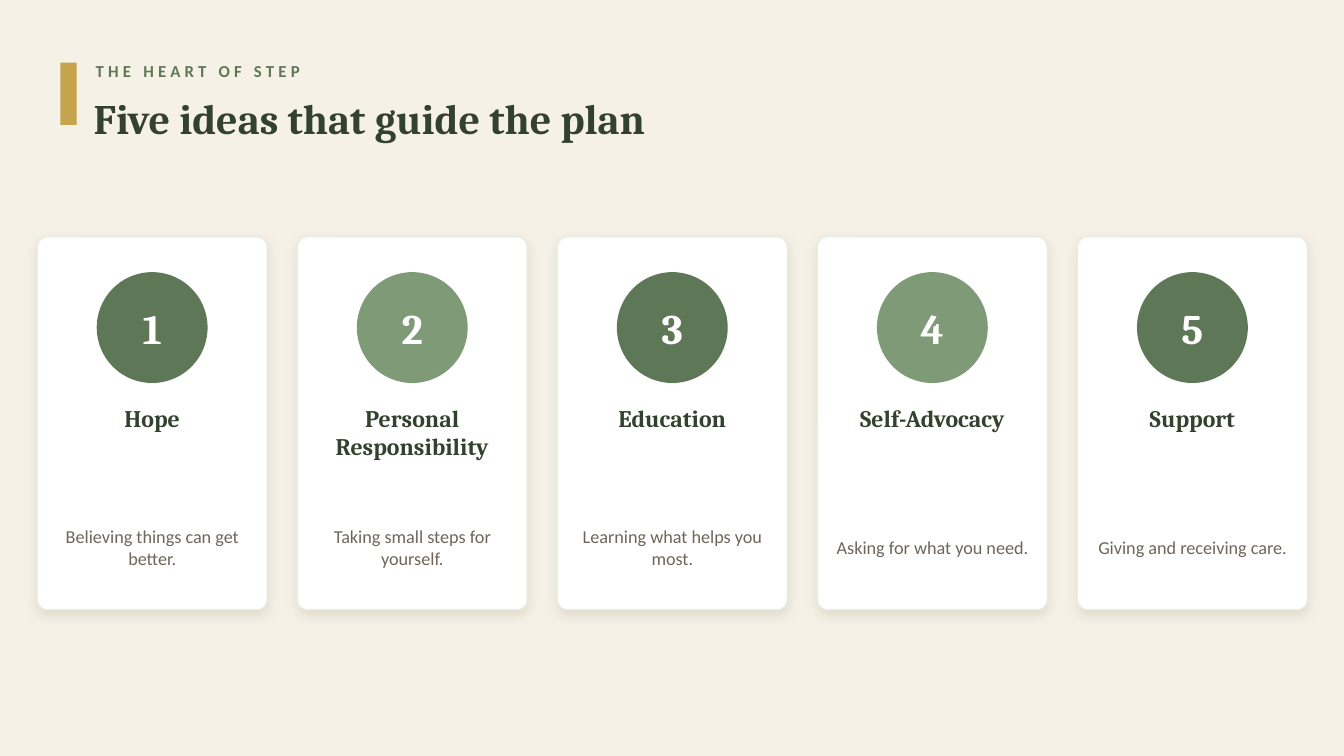
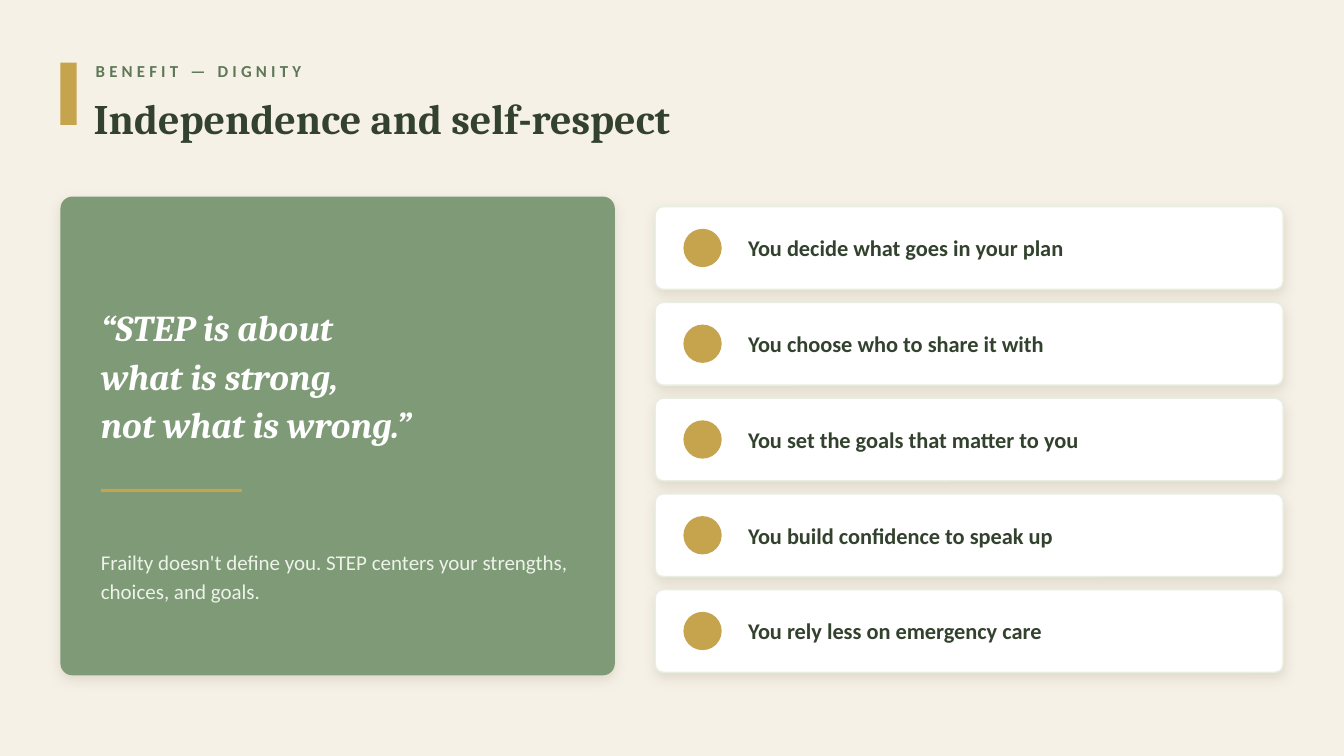
from lxml import etree
from pptx import Presentation
from pptx.dml.color import RGBColor
from pptx.enum import shapes, text
from pptx.oxml import ns
from pptx.util import Pt

CREAM = RGBColor(0xF6, 0xF1, 0xE7)
GOLD = RGBColor(0xC6, 0xA4, 0x4E)
MOSS = RGBColor(0x5E, 0x78, 0x57)
SAGE = RGBColor(0x7E, 0x9A, 0x77)
FOREST = RGBColor(0x33, 0x42, 0x2E)
TAUPE = RGBColor(0x6E, 0x66, 0x5A)
MIST = RGBColor(0xED, 0xF3, 0xE8)
EDGE = RGBColor(0xE8, 0xEE, 0xE2)
SHADE = RGBColor(0xB9, 0xB0, 0x9B)
WHITE = RGBColor(0xFF, 0xFF, 0xFF)

RECT = shapes.MSO_SHAPE.RECTANGLE
ROUNDED = shapes.MSO_SHAPE.ROUNDED_RECTANGLE
OVAL = shapes.MSO_SHAPE.OVAL
TOP = text.MSO_ANCHOR.TOP
MIDDLE = text.MSO_ANCHOR.MIDDLE
LEFT = text.PP_ALIGN.LEFT
CENTER = text.PP_ALIGN.CENTER

SERIF = {"name": "Cambria", "bold": True}
SANS = {"name": "Calibri"}
KICKER = {**SANS, "size": Pt(12), "bold": True, "rgb": MOSS}
TITLE = {**SERIF, "size": Pt(30), "rgb": FOREST}
NUMBER = {**SERIF, "size": Pt(30), "rgb": WHITE}
IDEA = {**SERIF, "size": Pt(17), "rgb": FOREST}
DETAIL = {**SANS, "size": Pt(13), "rgb": TAUPE}
QUOTE = {**SERIF, "size": Pt(26), "italic": True, "rgb": WHITE}
REMARK = {**SANS, "size": Pt(15), "rgb": MIST}
POINT = {**SANS, "size": Pt(16), "bold": True, "rgb": FOREST}

IDEAS = [
    (["Hope"], "Believing things can get better."),
    (["Personal", "Responsibility"], "Taking small steps for yourself."),
    (["Education"], "Learning what helps you most."),
    (["Self-Advocacy"], "Asking for what you need."),
    (["Support"], "Giving and receiving care."),
]
POINTS = [
    "You decide what goes in your plan",
    "You choose who to share it with",
    "You set the goals that matter to you",
    "You build confidence to speak up",
    "You rely less on emergency care",
]


def write(shape, lines, style, align=LEFT, anchor=MIDDLE, spacing=None,
          left=0, right=0, tracking=None):
    frame = shape.text_frame
    settings = {
        "word_wrap": True, "auto_size": text.MSO_AUTO_SIZE.NONE,
        "vertical_anchor": anchor, "margin_left": Pt(left),
        "margin_right": Pt(right), "margin_top": 0, "margin_bottom": 0,
    }
    for name, value in settings.items():
        setattr(frame, name, value)
    for index, line in enumerate(lines):
        para = frame.add_paragraph() if index else frame.paragraphs[0]
        para.alignment = align
        para.line_spacing = spacing
        span = para.add_run()
        span.text = line
        for name, value in style.items():
            setattr(span.font.color if name == "rgb" else span.font, name, value)
        if tracking:
            span._r.get_or_add_rPr().set("spc", str(tracking * 100))


def add_text(page, area, lines, style, **options):
    box = page.shapes.add_textbox(*map(Pt, area))
    write(box, lines, style, **options)


def add_block(page, kind, area, fill):
    block = page.shapes.add_shape(kind, *map(Pt, area))
    block.shadow.inherit = False
    block.fill.solid()
    block.fill.fore_color.rgb = fill
    block.line.fill.background()
    return block


def add_card(page, area, fill, rounding, edge=None):
    card = add_block(page, ROUNDED, area, fill)
    card.adjustments[0] = rounding
    if edge is not None:
        card.line.color.rgb = edge
        card.line.width = Pt(1)
    effects = card._element.spPr.find(ns.qn("a:effectLst"))
    shadow = etree.SubElement(
        effects, ns.qn("a:outerShdw"), blurRad=str(Pt(9)), dist=str(Pt(3)),
        dir="5400000", algn="bl", rotWithShape="0")
    tint = etree.SubElement(shadow, ns.qn("a:srgbClr"), val=str(SHADE))
    etree.SubElement(tint, ns.qn("a:alpha"), val="35000")
    return card


def add_page(deck, kicker, heading):
    page = deck.slides.add_slide(deck.slide_layouts[5])
    add_block(page, RECT, (43.2, 44.64, 11.52, 44.64), GOLD)
    add_text(page, (68.4, 39.6, 828, 21.6), [kicker], KICKER, tracking=3)
    title = page.shapes.title
    title.left, title.top, title.width, title.height = map(
        Pt, (66.96, 59.04, 835.2, 50.4))
    write(title, [heading], TITLE)
    return page


def add_idea(page, index, name, detail):
    width, gap, circle = 164.16, 21.6, 79.2
    left = 26.64 + index * (width + gap)
    add_card(page, (left, 169.2, width, 266.4), WHITE, 0.044, EDGE)
    badge = add_block(page, OVAL,
                      (left + (width - circle) / 2, 194.4, circle, circle),
                      SAGE if index % 2 else MOSS)
    write(badge, [str(index + 1)], NUMBER, align=CENTER)
    rows = [(name, IDEA, 8.64, 288, TOP), ([detail], DETAIL, 10.8, 356.4, MIDDLE)]
    for lines, style, inset, top, anchor in rows:
        add_text(page, (left + inset, top, width - 2 * inset, 68.4), lines, style,
                 align=CENTER, anchor=anchor)


def add_point(page, index, line):
    left, top, height, dot = 468, 147.6 + index * 68.4, 59.04, 27.36
    card = add_card(page, (left, top, 448.56, height), WHITE, 0.098, EDGE)
    write(card, [line], POINT, left=64.8, right=9.36)
    add_block(page, OVAL,
              (left + 20.16, top + (height - dot) / 2, dot, dot), GOLD)


def add_quote_panel(page):
    add_card(page, (43.2, 140.4, 396, 342), SAGE, 0.025)
    add_text(page, (72, 194.4, 345.6, 144),
             ["“STEP is about", "what is strong,", "not what is wrong.”"],
             QUOTE, spacing=1.12)
    add_block(page, RECT, (72, 349.2, 100.8, 2.16), GOLD)
    add_text(page, (72, 363.6, 338.4, 93.6),
             ["Frailty doesn't define you. STEP centers your strengths, "
              "choices, and goals."], REMARK, spacing=1.15)


def main():
    deck = Presentation()
    deck.slide_width, deck.slide_height = Pt(960), Pt(540)
    backdrop = deck.slide_master.background.fill
    backdrop.solid()
    backdrop.fore_color.rgb = CREAM

    page = add_page(deck, "THE HEART OF STEP", "Five ideas that guide the plan")
    for index, (name, detail) in enumerate(IDEAS):
        add_idea(page, index, name, detail)

    page = add_page(deck, "BENEFIT — DIGNITY", "Independence and self-respect")
    add_quote_panel(page)
    for index, line in enumerate(POINTS):
        add_point(page, index, line)

    deck.save("out.pptx")


if __name__ == "__main__":
    main()
